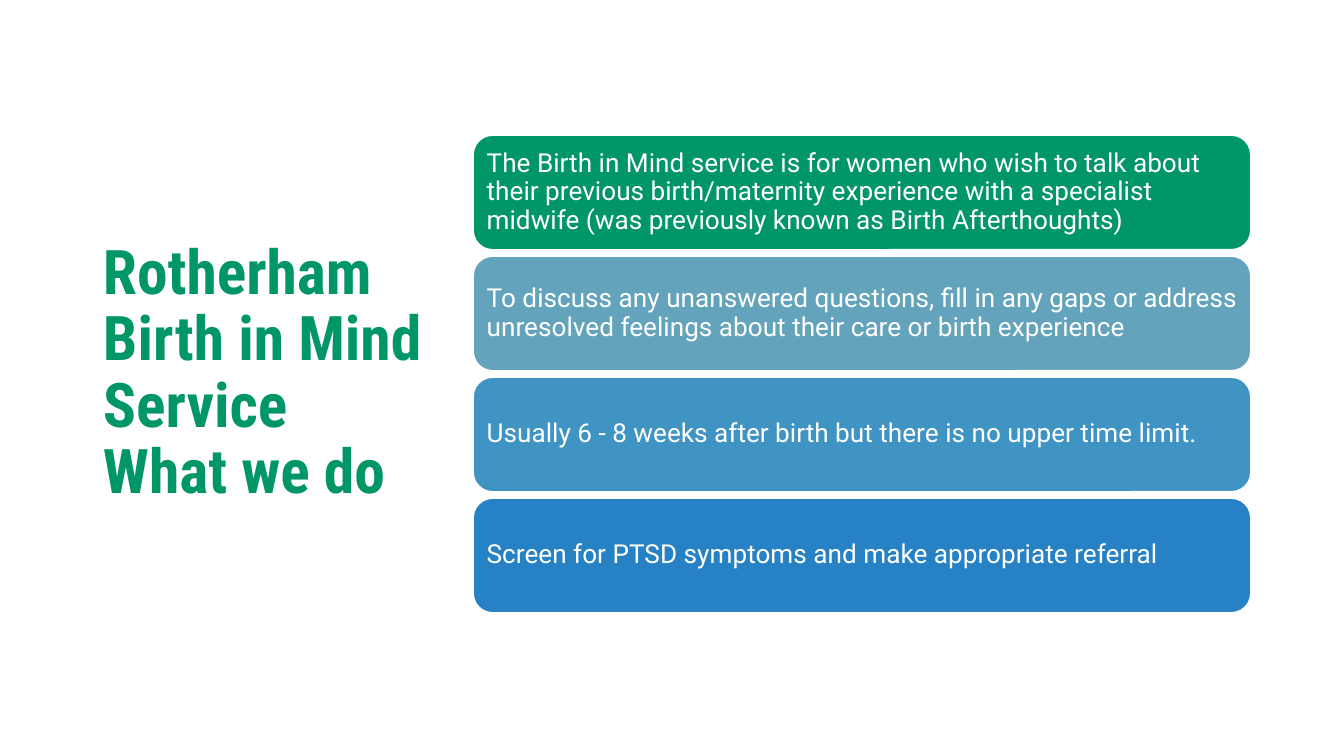
"""Build the Birth in Mind service slide: a title beside four stacked cards."""
from pptx import Presentation, util as u
from pptx.dml.color import RGBColor as Rgb
from pptx.enum import shapes, text

THEME = {
    "green": "009668",
    "white": "FFFFFF",
    "fills": ["009668", "63A3BB", "4094C4", "2682C4"],
    "head": ("Roboto Condensed", 33),
    "body": ("Roboto", 14),
}
CARDS = [
    "The Birth in Mind service is for women who wish to talk about their previous "
    "birth/maternity experience with a specialist midwife (was previously known as "
    "Birth Afterthoughts)",
    "To discuss any unanswered questions, fill in any gaps or address unresolved "
    "feelings about their care or birth experience",
    "Usually 6 - 8 weeks after birth but there is no upper time limit.",
    "Screen for PTSD symptoms and make appropriate referral",
]
LEFT, TOP, WIDE, HIGH, STEP = 473, 135, 778, 115, 121


def px(n):
    return u.Emu(round(n * 914400 / 134.4))


def write(shape, words, style, color, pads, bold=False):
    frame = shape.text_frame
    frame.word_wrap = True
    frame.vertical_anchor = text.MSO_ANCHOR.MIDDLE
    frame.margin_left, frame.margin_top, frame.margin_right, frame.margin_bottom = map(px, pads)
    para = frame.paragraphs[0]
    para.text = words
    para.alignment = text.PP_ALIGN.LEFT
    para.line_spacing = 0.9
    font = para.font
    font.name, font.size, font.bold = style[0], u.Pt(style[1]), bold
    font.color.rgb = Rgb.from_string(color)


deck = Presentation()
deck.slide_width, deck.slide_height = px(1344), px(756)
slide = deck.slides.add_slide(deck.slide_layouts[6])

title = slide.shapes.add_textbox(px(93), px(67), px(352), px(614))
write(title, "Rotherham Birth in Mind Service\vWhat we do",
      THEME["head"], THEME["green"], (10, 5, 10, 5), bold=True)

for row, (words, fill) in enumerate(zip(CARDS, THEME["fills"])):
    card = slide.shapes.add_shape(shapes.MSO_SHAPE.ROUNDED_RECTANGLE,
                                  px(LEFT), px(TOP + row * STEP), px(WIDE), px(HIGH))
    card.adjustments[0] = 0.17
    card.shadow.inherit = False
    card.fill.solid()
    card.fill.fore_color.rgb = Rgb.from_string(fill)
    card.line.color.rgb = Rgb.from_string(THEME["white"])
    card.line.width = u.Pt(1)
    write(card, words, THEME["body"], THEME["white"], (8, 8, 7, 8))

deck.save("out.pptx")
